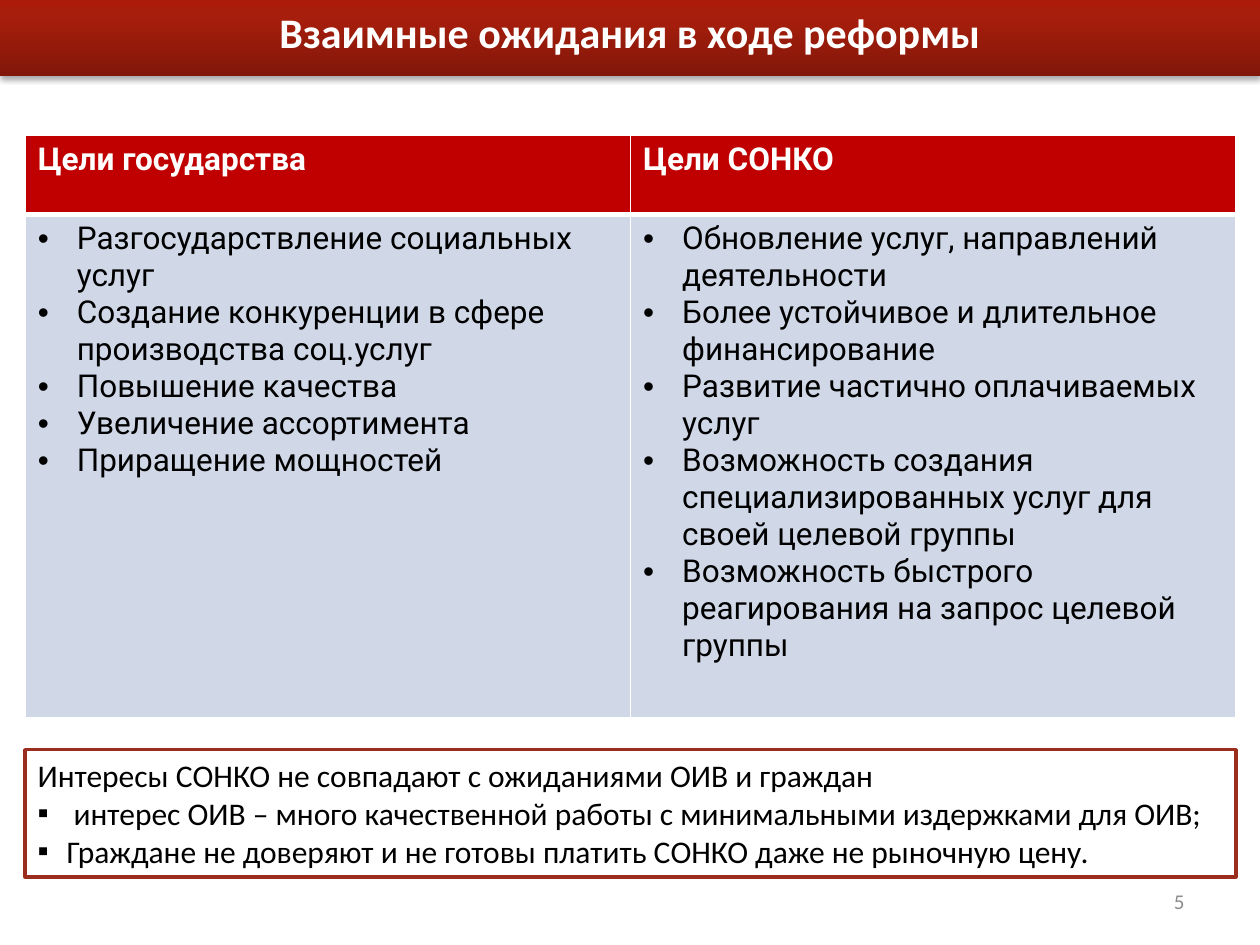
from copy import deepcopy
from dataclasses import dataclass

from lxml.etree import SubElement
from pptx import Presentation
from pptx.dml.color import RGBColor
from pptx.enum.shapes import MSO_SHAPE as Shape
from pptx.enum.text import MSO_ANCHOR as Anchor, PP_ALIGN as Align
from pptx.oxml.ns import qn
from pptx.util import Inches, Pt

WHITE = RGBColor(0xFF, 0xFF, 0xFF)
BLACK = RGBColor(0x00, 0x00, 0x00)
GREY = RGBColor(0x8C, 0x8C, 0x8C)
RED = RGBColor(0xC0, 0x00, 0x00)
PALE_BLUE = RGBColor(0xD0, 0xD8, 0xE8)
BRICK = RGBColor(0x9B, 0x2D, 0x1F)
TITLE_STOPS = [
    (0, RGBColor(0x82, 0x17, 0x09)),
    (0.8, RGBColor(0xA8, 0x1E, 0x0C)),
    (1, RGBColor(0xAC, 0x1B, 0x09)),
]

LEFT, WIDTH = Inches(0.2), Inches(9.61)
HEADER_HEIGHT, BODY_HEIGHT = Inches(0.63), Inches(4)

TITLE = {"name": "Calibri", "size": Pt(24), "bold": True}
HEADER = {"name": "Roboto", "size": Pt(18), "bold": True}
BODY = {"name": "Roboto", "size": Pt(18), "bold": False}
NOTE = {"name": "Calibri", "size": Pt(18)}
NUMBER = {"name": "Calibri", "size": Pt(12)}


@dataclass
class Goals:
    heading: str
    items: list[str]


GOALS = [
    Goals("Цели государства", [
        "Разгосударствление социальных услуг",
        "Создание конкуренции в сфере производства соц.услуг",
        "Повышение качества",
        "Увеличение ассортимента",
        "Приращение мощностей",
    ]),
    Goals("Цели СОНКО", [
        "Обновление услуг, направлений деятельности",
        "Более устойчивое и длительное финансирование",
        "Развитие частично оплачиваемых услуг",
        "Возможность создания специализированных услуг для своей целевой группы",
        "Возможность быстрого реагирования на запрос целевой группы",
    ]),
]
INTERESTS = [
    "Интересы СОНКО не совпадают с ожиданиями ОИВ и граждан",
    " интерес ОИВ – много качественной работы с минимальными издержками для ОИВ;",
    "Граждане не доверяют и не готовы платить СОНКО даже не рыночную цену.",
]


def add_bullet(p, char: str, indent: int) -> None:
    pPr = p._p.get_or_add_pPr()
    pPr.set("marL", str(indent))
    pPr.set("indent", str(-indent))
    SubElement(pPr, qn("a:buFont"), typeface="Arial")
    SubElement(pPr, qn("a:buChar"), char=char)


def write(tf, lines: list[str], font: dict, color: RGBColor, align=Align.LEFT) -> list:
    """Fill the frame with one paragraph per line and return the paragraphs."""
    tf.word_wrap = True
    for i, line in enumerate(lines):
        p = tf.paragraphs[0] if i == 0 else tf.add_paragraph()
        p.alignment = align
        r = p.add_run()
        r.text = line
        for key, value in font.items():
            setattr(r.font, key, value)
        r.font.color.rgb = color
    return list(tf.paragraphs)


def set_borders(cell, **widths: float) -> None:
    """Draw white borders; widths are points by side, in the order L, R, T, B."""
    tcPr = cell._tc.get_or_add_tcPr()
    for i, (side, width) in enumerate(widths.items()):
        ln = tcPr.makeelement(qn(f"a:ln{side}"), {"w": str(Pt(width))})
        fill = SubElement(ln, qn("a:solidFill"))
        SubElement(fill, qn("a:srgbClr"), val=str(WHITE))
        tcPr.insert(i, ln)


def add_title(s, text: str) -> None:
    sp = s.shapes.add_shape(Shape.RECTANGLE, 0, 0, Inches(10), Inches(0.6))
    sp.fill.gradient()
    sp.fill.gradient_angle = 90
    gs_list = sp._element.spPr.find(f".//{qn('a:gsLst')}")
    gs_list.append(deepcopy(gs_list[-1]))
    for stop, (position, color) in zip(sp.fill.gradient_stops, TITLE_STOPS):
        stop.position = position
        stop.color.rgb = color
    sp.line.fill.background()
    sp.shadow.inherit = False
    effects = sp._element.spPr.find(qn("a:effectLst"))
    shadow = SubElement(effects, qn("a:outerShdw"), blurRad=str(Pt(3.1)),
                        dist=str(Pt(1.8)), dir="5400000", rotWithShape="0")
    color = SubElement(shadow, qn("a:srgbClr"), val=str(BLACK))
    SubElement(color, qn("a:alpha"), val="35000")
    sp.text_frame.vertical_anchor = Anchor.TOP
    write(sp.text_frame, [text], TITLE, WHITE, Align.CENTER)


def add_goals_table(s, goals: list[Goals]) -> None:
    table = s.shapes.add_table(2, len(goals), LEFT, Inches(1.07), WIDTH,
                               HEADER_HEIGHT + BODY_HEIGHT).table
    table.rows[0].height, table.rows[1].height = HEADER_HEIGHT, BODY_HEIGHT
    for col, goal in enumerate(goals):
        header, body = table.cell(0, col), table.cell(1, col)
        for cell, color in ((header, RED), (body, PALE_BLUE)):
            cell.fill.solid()
            cell.fill.fore_color.rgb = color
        set_borders(header, L=1, R=1, T=1, B=3)
        set_borders(body, L=1, R=1, T=3, B=1)
        write(header.text_frame, [goal.heading], HEADER, WHITE)
        for p in write(body.text_frame, goal.items, BODY, BLACK):
            add_bullet(p, "•", Inches(0.31))


def add_interests(s, lines: list[str]) -> None:
    sp = s.shapes.add_shape(Shape.RECTANGLE, LEFT, Inches(5.95), WIDTH, Inches(1.01))
    sp.shadow.inherit = False
    sp.fill.solid()
    sp.fill.fore_color.rgb = WHITE
    sp.line.color.rgb = BRICK
    sp.line.width = Pt(2)
    sp.text_frame.vertical_anchor = Anchor.TOP
    for p in write(sp.text_frame, lines, NOTE, BLACK)[1:]:
        add_bullet(p, "▪", Inches(0.23))


def add_slide_number(s, number: str) -> None:
    tf = s.shapes.add_textbox(Inches(7.17), Inches(6.95), Inches(2.33), Inches(0.4)).text_frame
    tf.vertical_anchor = Anchor.MIDDLE
    write(tf, [number], NUMBER, GREY, Align.RIGHT)


def main() -> None:
    prs = Presentation()
    prs.slide_width, prs.slide_height = Inches(10), Inches(7.5)
    s = prs.slides.add_slide(prs.slide_layouts[6])
    add_title(s, "Взаимные ожидания в ходе реформы")
    add_goals_table(s, GOALS)
    add_interests(s, INTERESTS)
    add_slide_number(s, "5")
    prs.save("out.pptx")


if __name__ == "__main__":
    main()
